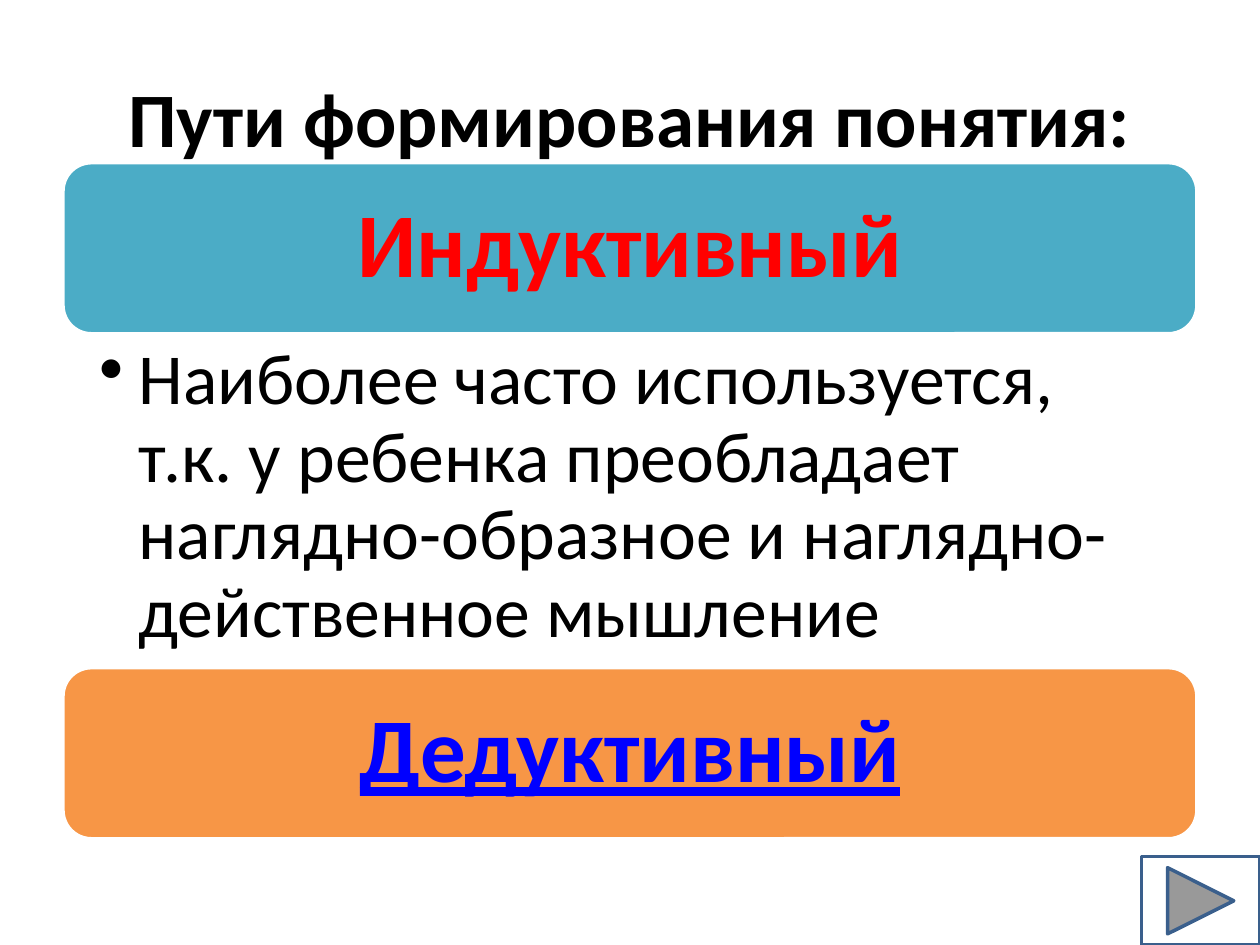
from lxml import etree
from pptx import Presentation
from pptx.dml.color import RGBColor
from pptx.enum.shapes import MSO_SHAPE
from pptx.enum.text import MSO_ANCHOR, PP_ALIGN
from pptx.oxml.ns import qn
from pptx.util import Cm, Pt

ROUNDED = MSO_SHAPE.ROUNDED_RECTANGLE
FORWARD = MSO_SHAPE.ACTION_BUTTON_FORWARD_OR_NEXT
MIDDLE = MSO_ANCHOR.MIDDLE
TOP = MSO_ANCHOR.TOP
CENTER = PP_ALIGN.CENTER
LEFT = PP_ALIGN.LEFT


def color(value):
    return RGBColor.from_string(value)


class ConceptSlide:
    font_name = "Calibri"
    black = "000000"
    white = "FFFFFF"
    outline_width = 2

    def __init__(self, presentation):
        self.slide = presentation.slides.add_slide(presentation.slide_layouts[6])

    def set_text(self, holder, text, size, ink, bold=False, underline=False,
                 align=CENTER, anchor=MIDDLE, insets=(0.25, 0.13, 0.25, 0.13)):
        frame = holder.text_frame
        frame.word_wrap = True
        frame.vertical_anchor = anchor
        (frame.margin_left, frame.margin_top,
         frame.margin_right, frame.margin_bottom) = map(Cm, insets)
        paragraph = frame.paragraphs[0]
        paragraph.text = text
        paragraph.alignment = align
        font = paragraph.font
        font.name = self.font_name
        font.size = Pt(size)
        font.bold = bold
        font.underline = underline
        font.color.rgb = color(ink)
        return paragraph

    def shape(self, kind, box, fill, line):
        figure = self.slide.shapes.add_shape(kind, *map(Cm, box))
        figure.shadow.inherit = False
        figure.fill.solid()
        figure.fill.fore_color.rgb = color(fill)
        figure.line.color.rgb = color(line)
        figure.line.width = Pt(self.outline_width)
        return figure

    def title(self, text, box):
        heading = self.slide.shapes.add_textbox(*map(Cm, box))
        self.set_text(heading, text, 44, self.black, bold=True)

    def banner(self, text, box, fill, ink, underline=False):
        panel = self.shape(ROUNDED, box, fill, self.white)
        paragraph = self.set_text(panel, text, 52, ink, bold=True,
                                  underline=underline, insets=(0.56,) * 4)
        paragraph.line_spacing = 0.9

    def bullet(self, text, box):
        explanation = self.slide.shapes.add_textbox(*map(Cm, box))
        paragraph = self.set_text(explanation, text, 41, self.black, align=LEFT,
                                  anchor=TOP, insets=(0.73, 0.18, 1.02, 0.18))
        paragraph.line_spacing = 0.9
        properties = paragraph._p.get_or_add_pPr()
        indent = Cm(0.79)
        properties.set("marL", str(indent))
        properties.set("indent", str(-indent))
        marker = etree.Element(qn("a:buChar"), char="•")
        properties.find(qn("a:lnSpc")).addnext(marker)

    def forward_button(self, box):
        self.shape(FORWARD, box, self.white, "3A5F8C")


def main():
    presentation = Presentation()
    presentation.slide_width = Cm(25.4)
    presentation.slide_height = Cm(19.05)
    concept = ConceptSlide(presentation)

    margin, width = 1.27, 22.86
    banner_height, explanation_height = 3.45, 6.73
    inductive_top = 3.28
    explanation_top = inductive_top + banner_height
    deductive_top = explanation_top + explanation_height

    concept.title("Пути формирования понятия:", (margin, 0.76, width, 3.18))
    concept.banner("Индуктивный", (margin, inductive_top, width, banner_height),
                   "4BACC6", "FF0000")
    concept.bullet("Наиболее часто используется, т.к. у ребенка преобладает "
                   "наглядно-образное и наглядно-действенное мышление",
                   (margin, explanation_top, width, explanation_height))
    concept.banner("Дедуктивный", (margin, deductive_top, width, banner_height),
                   "F79646", "0000FF", underline=True)
    concept.forward_button((23.01, 17.27, 2.39, 1.78))

    presentation.save("out.pptx")


if __name__ == "__main__":
    main()
